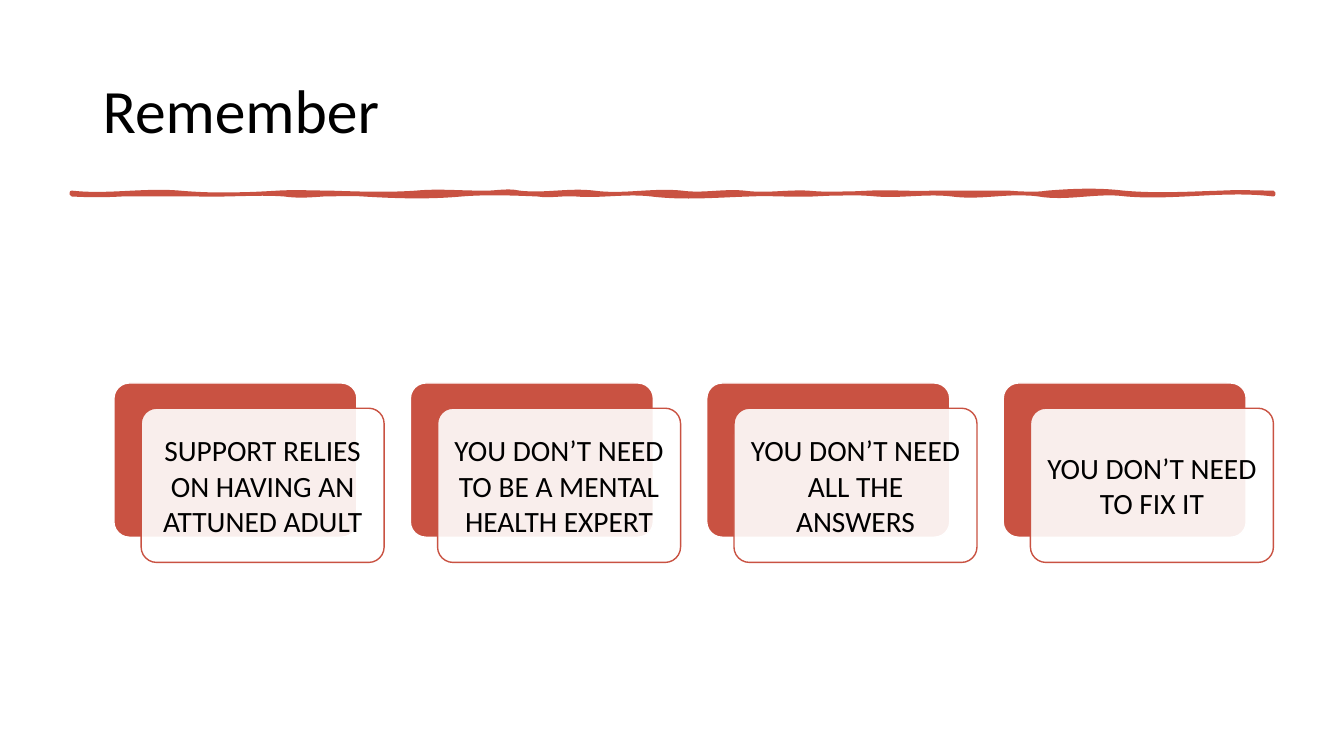
from dataclasses import dataclass

from lxml import etree
from pptx import Presentation
from pptx.dml.color import RGBColor
from pptx.enum.shapes import MSO_SHAPE
from pptx.enum.text import MSO_ANCHOR, PP_ALIGN
from pptx.oxml.ns import qn
from pptx.util import Inches, Pt

ROUNDED = MSO_SHAPE.ROUNDED_RECTANGLE
MIDDLE = MSO_ANCHOR.MIDDLE
CENTER = PP_ALIGN.CENTER


@dataclass(frozen=True)
class Theme:
    font: str = "Calibri"
    accent: RGBColor = RGBColor(0xC9, 0x52, 0x42)
    white: RGBColor = RGBColor(0xFF, 0xFF, 0xFF)
    ink: RGBColor = RGBColor(0, 0, 0)
    title_size: Pt = Pt(44)
    card_size: Pt = Pt(21)
    card_line: Pt = Pt(1)
    rule_line: Pt = Pt(2.75)


THEME = Theme()

REMINDERS = [
    "SUPPORT RELIES ON HAVING AN ATTUNED ADULT",
    "YOU DON’T NEED TO BE A MENTAL HEALTH EXPERT",
    "YOU DON’T NEED ALL THE ANSWERS",
    "YOU DON’T NEED TO FIX IT",
]
CARD_LEFT, CARD_TOP, CARD_PITCH = 1.13, 3.8, 2.94
CARD_WIDTH, CARD_HEIGHT = 2.41, 1.53
FRONT_SHIFT_X, FRONT_SHIFT_Y = 0.27, 0.25

# Each wave: the x where it ends, then the heights of its two bends.
RULE_LEFT, RULE_RIGHT = 0.71, 12.63
LOWER_Y, UPPER_Y = 1.93, 1.91
LOWER_WAVES = [
    (1.21, 1.94, 1.94), (1.96, 1.93, 1.93), (2.82, 1.94, 1.91),
    (3.21, 1.95, 1.94), (3.6, 1.93, 1.92), (4.58, 1.95, 1.96),
    (5.33, 1.91, 1.92), (5.71, 1.95, 1.92), (6.46, 1.95, 1.9),
    (7.44, 1.97, 1.94), (8.07, 1.92, 1.94), (8.69, 1.92, 1.91),
    (9.44, 1.95, 1.9), (10.3, 1.97, 1.89), (11.17, 1.98, 1.89),
    (RULE_RIGHT, 1.97, 1.87),
]
UPPER_WAVES = [
    (12.12, 1.91, 1.9), (11.14, 1.92, 1.94), (10.39, 1.88, 1.89),
    (10, 1.93, 1.92), (9.26, 1.91, 1.91), (8.63, 1.92, 1.9),
    (8.01, 1.92, 1.93), (7.38, 1.9, 1.94), (6.76, 1.89, 1.94),
    (5.89, 1.88, 1.95), (5.15, 1.88, 1.94), (4.76, 1.88, 1.92),
    (4.13, 1.91, 1.89), (3.27, 1.93, 1.92), (2.76, 1.91, 1.9),
    (1.78, 1.93, 1.94), (RULE_LEFT, 1.88, 1.95),
]


def edge_ends(base, waves):
    return [(Inches(end), Inches(base)) for end, _, _ in waves]


def bend_edge(segments, start, waves):
    """Turn straight segments into cubic curves, bends at the thirds."""
    for segment, (end, *bends) in zip(segments, waves):
        segment.tag = qn("a:cubicBezTo")
        for place, bend in enumerate(bends):
            x = start + (end - start) * (place + 1) / 3
            point = etree.Element(qn("a:pt"), x=str(Inches(x - RULE_LEFT)),
                                  y=str(Inches(bend - UPPER_Y)))
            segment.insert(place, point)
        start = end


def paint(shape, fill, line, width):
    shape.shadow.inherit = False
    shape.fill.solid()
    shape.fill.fore_color.rgb = fill
    shape.line.color.rgb = line
    shape.line.width = width


def add_rule(page):
    """Draw the wavy rule: lower edge, right end, upper edge back."""
    builder = page.shapes.build_freeform(Inches(RULE_LEFT), Inches(LOWER_Y))
    builder.add_line_segments(
        edge_ends(LOWER_Y, LOWER_WAVES)
        + [(Inches(RULE_RIGHT), Inches(UPPER_Y))]
        + edge_ends(UPPER_Y, UPPER_WAVES), close=True)
    rule = builder.convert_to_shape()
    segments = list(rule.element.iter(qn("a:lnTo")))
    corner = len(LOWER_WAVES)
    bend_edge(segments[:corner], RULE_LEFT, LOWER_WAVES)
    bend_edge(segments[corner + 1:], RULE_RIGHT, UPPER_WAVES)
    paint(rule, THEME.accent, THEME.accent, THEME.rule_line)


def write(frame, text, size):
    frame.word_wrap = True
    frame.vertical_anchor = MIDDLE
    para = frame.paragraphs[0]
    para.text = text
    para.font.name = THEME.font
    para.font.size = size
    para.font.color.rgb = THEME.ink
    return para


def add_title(page, text):
    box = page.shapes.add_textbox(Inches(0.92), Inches(0.4),
                                  Inches(11.5), Inches(1.45))
    write(box.text_frame, text, THEME.title_size).line_spacing = 0.9


def add_panel(page, left, top, fill, line):
    panel = page.shapes.add_shape(ROUNDED, Inches(left), Inches(top),
                                  Inches(CARD_WIDTH), Inches(CARD_HEIGHT))
    panel.adjustments[0] = 0.1
    paint(panel, fill, line, THEME.card_line)
    return panel


def set_opacity(shape, percent):
    color = shape.element.spPr.find(qn("a:solidFill"))[0]
    etree.SubElement(color, qn("a:alpha"), val=str(percent * 1000))


def add_card(page, left, text):
    """Add a solid back panel and a shifted, translucent panel with text."""
    add_panel(page, left, CARD_TOP, THEME.accent, THEME.white)
    front = add_panel(page, left + FRONT_SHIFT_X, CARD_TOP + FRONT_SHIFT_Y,
                      THEME.white, THEME.accent)
    set_opacity(front, 90)
    frame = front.text_frame
    frame.margin_left = frame.margin_right = Inches(0.09)
    frame.margin_top = frame.margin_bottom = Inches(0.09)
    write(frame, text, THEME.card_size).alignment = CENTER


def main():
    deck = Presentation()
    deck.slide_width, deck.slide_height = Inches(13.33), Inches(7.5)
    page = deck.slides.add_slide(deck.slide_layouts[6])
    add_rule(page)
    add_title(page, "Remember")
    for index, reminder in enumerate(REMINDERS):
        add_card(page, CARD_LEFT + index * CARD_PITCH, reminder)
    deck.save("out.pptx")


if __name__ == "__main__":
    main()
